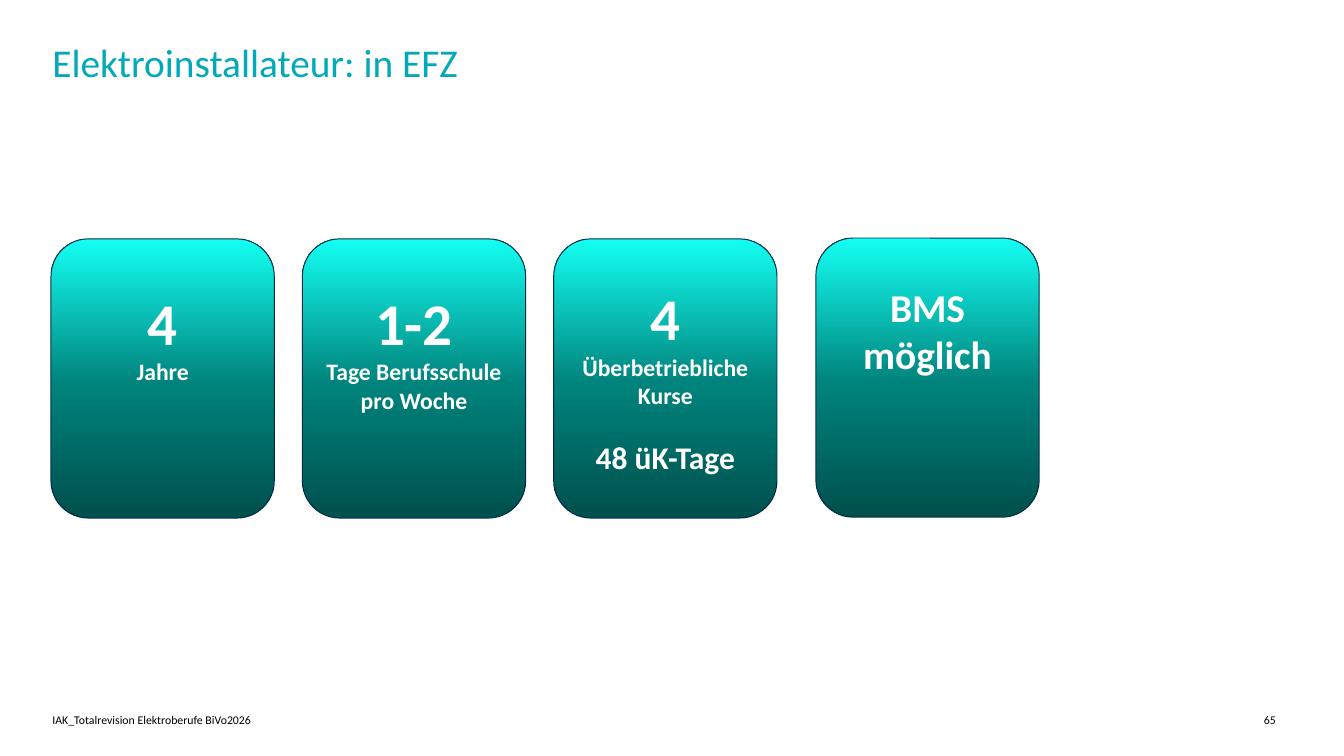
from copy import deepcopy
from dataclasses import dataclass

from pptx import Presentation
from pptx.dml.color import RGBColor
from pptx.enum.shapes import MSO_SHAPE
from pptx.enum.text import MSO_ANCHOR, PP_ALIGN
from pptx.oxml.ns import qn
from pptx.shapes.autoshape import Shape
from pptx.slide import Slide
from pptx.text.text import TextFrame, _Paragraph
from pptx.util import Pt


@dataclass(frozen=True)
class Theme:
    font: str = "Calibri"
    title_color: str = "03A9B9"
    footer_color: str = "000000"
    card_text: str = "FFFFFF"
    card_outline: str = "00284A"
    card_gradient: tuple[tuple[float, str], ...] = (
        (0, "00504C"),
        (0.48, "00837C"),
        (1, "14FFF3"),
    )
    title_size: float = 40
    footer_size: float = 12
    figure_size: float = 60
    unit_size: float = 24
    total_size: float = 32
    headline_size: float = 40


@dataclass(frozen=True)
class Label:
    text: str
    left: float
    top: float
    width: float
    height: float
    size: float
    color: str
    line_spacing: float
    anchor: MSO_ANCHOR


@dataclass(frozen=True)
class Line:
    text: str
    size: float
    space_before: float = 0


@dataclass(frozen=True)
class Card:
    left: float
    top: float
    top_inset: float
    lines: tuple[Line, ...]


THEME = Theme()
SLIDE_WIDTH, SLIDE_HEIGHT = 1365.12, 768.24
MARGIN = 53.3
FOOTER_TOP, FOOTER_HEIGHT, FOOTER_SPACING = 718.2, 14.4, 25.6
CARD_WIDTH, CARD_HEIGHT = 226.8, 283.7
CARD_LEFT, CARD_TOP, CARD_PITCH = 51.8, 242.8, 255.3
CARD_SIDE_INSET = 2.9

LABELS = (
    Label("Elektroinstallateur: in EFZ", MARGIN, 43.9, 1264.3, 84.2,
          THEME.title_size, THEME.title_color, 43, MSO_ANCHOR.TOP),
    Label("IAK_Totalrevision Elektroberufe BiVo2026", MARGIN, FOOTER_TOP, 913.7, FOOTER_HEIGHT,
          THEME.footer_size, THEME.footer_color, FOOTER_SPACING, MSO_ANCHOR.MIDDLE),
    Label("65", 1283.8, FOOTER_TOP, 33.8, FOOTER_HEIGHT,
          THEME.footer_size, THEME.footer_color, FOOTER_SPACING, MSO_ANCHOR.MIDDLE),
)

CARDS = (
    Card(CARD_LEFT, CARD_TOP, 37.2, (
        Line("4", THEME.figure_size),
        Line("Jahre", THEME.unit_size),
    )),
    Card(CARD_LEFT + CARD_PITCH, CARD_TOP, 37.2, (
        Line("1-2", THEME.figure_size),
        Line("Tage Berufsschule pro Woche", THEME.unit_size),
    )),
    Card(CARD_LEFT + 2 * CARD_PITCH, CARD_TOP, 32.4, (
        Line("4", THEME.figure_size),
        Line("Überbetriebliche Kurse", THEME.unit_size),
        Line("48 üK-Tage", THEME.total_size, space_before=29.3),
    )),
    Card(828.7, 241.9, 34.8, (
        Line("BMS", THEME.headline_size),
        Line("möglich", THEME.headline_size),
    )),
)


def add_run(paragraph: _Paragraph, text: str, size: float, color: str, bold: bool = False) -> None:
    run = paragraph.add_run()
    run.text = text
    run.font.name = THEME.font
    run.font.size = Pt(size)
    run.font.bold = bold
    run.font.color.rgb = RGBColor.from_string(color)


def prepare_frame(frame: TextFrame, anchor: MSO_ANCHOR, side: float = 0, top: float = 0) -> None:
    frame.word_wrap = True
    frame.vertical_anchor = anchor
    frame.margin_left = frame.margin_right = Pt(side)
    frame.margin_top = Pt(top)
    frame.margin_bottom = Pt(0)


def add_label(slide: Slide, label: Label) -> None:
    box = slide.shapes.add_textbox(
        Pt(label.left), Pt(label.top), Pt(label.width), Pt(label.height)
    )
    prepare_frame(box.text_frame, label.anchor)
    paragraph = box.text_frame.paragraphs[0]
    paragraph.line_spacing = Pt(label.line_spacing)
    add_run(paragraph, label.text, label.size, label.color)


def fill_with_gradient(shape: Shape) -> None:
    shape.fill.gradient()
    shape.fill.gradient_angle = 90
    stop_list = next(shape.element.iter(qn("a:gsLst")))
    stop_list.append(deepcopy(stop_list[0]))
    for stop, (position, color) in zip(shape.fill.gradient_stops, THEME.card_gradient):
        stop.position = position
        stop.color.rgb = RGBColor.from_string(color)


def add_card(slide: Slide, card: Card) -> None:
    shape = slide.shapes.add_shape(
        MSO_SHAPE.ROUNDED_RECTANGLE,
        Pt(card.left), Pt(card.top), Pt(CARD_WIDTH), Pt(CARD_HEIGHT),
    )
    shape.shadow.inherit = False
    fill_with_gradient(shape)
    shape.line.color.rgb = RGBColor.from_string(THEME.card_outline)
    shape.line.width = Pt(1)
    frame = shape.text_frame
    prepare_frame(frame, MSO_ANCHOR.TOP, CARD_SIDE_INSET, card.top_inset)
    for index, line in enumerate(card.lines):
        paragraph = frame.add_paragraph() if index else frame.paragraphs[0]
        paragraph.alignment = PP_ALIGN.CENTER
        paragraph.space_before = Pt(line.space_before)
        add_run(paragraph, line.text, line.size, THEME.card_text, bold=True)


def main() -> None:
    presentation = Presentation()
    presentation.slide_width = Pt(SLIDE_WIDTH)
    presentation.slide_height = Pt(SLIDE_HEIGHT)
    slide = presentation.slides.add_slide(presentation.slide_layouts[6])
    for label in LABELS:
        add_label(slide, label)
    for card in CARDS:
        add_card(slide, card)
    presentation.save("out.pptx")


if __name__ == "__main__":
    main()
